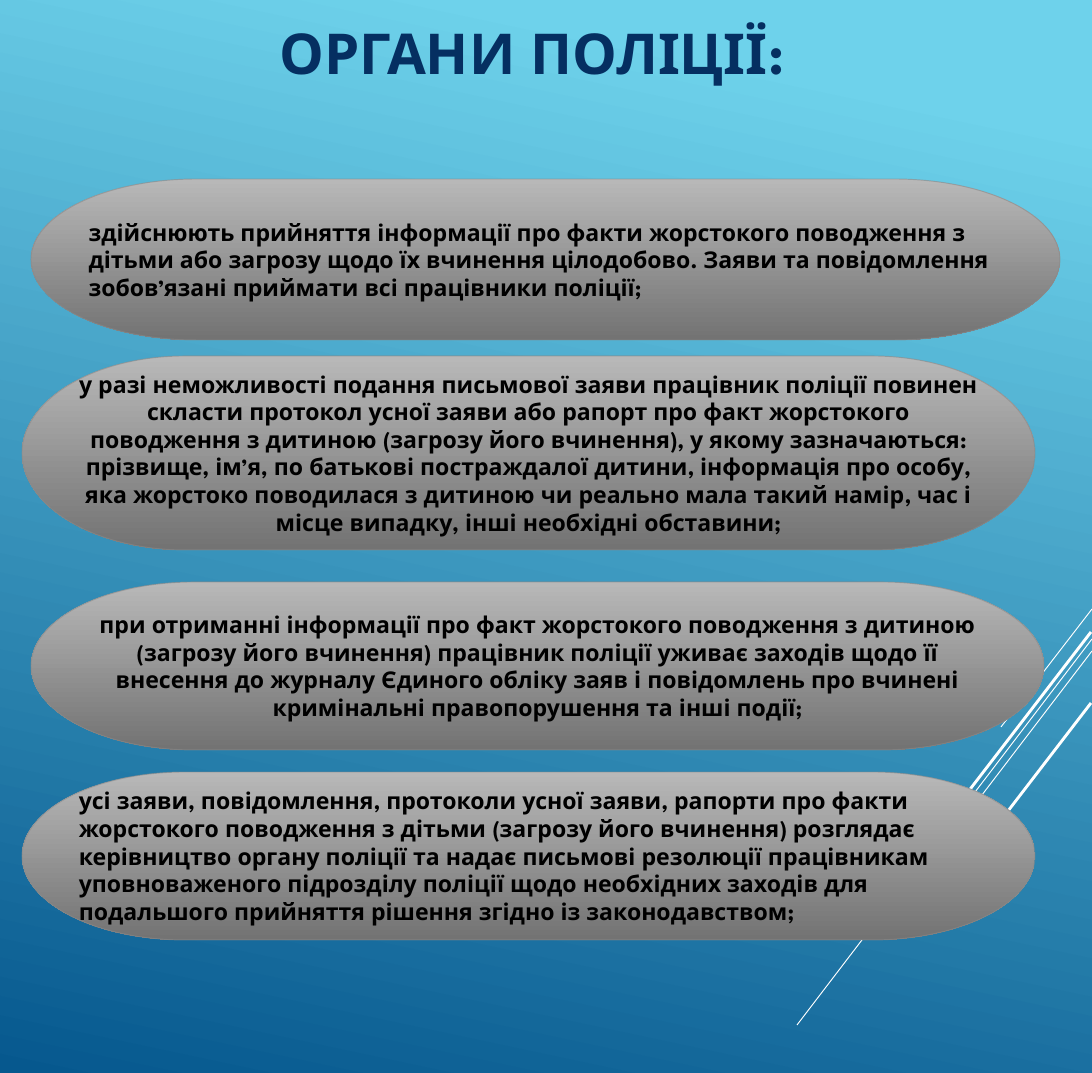
import pptx
import pptx.dml.color
import pptx.enum.shapes
import pptx.enum.text
import pptx.oxml
import pptx.oxml.ns
import pptx.util

WHITE = pptx.dml.color.RGBColor(0xFF, 0xFF, 0xFF)
BLACK = pptx.dml.color.RGBColor(0x00, 0x00, 0x00)
NAVY = pptx.dml.color.RGBColor(0x05, 0x2F, 0x61)
SKY = pptx.dml.color.RGBColor(0x6E, 0xD2, 0xEB)
DEEP_BLUE = pptx.dml.color.RGBColor(0x06, 0x58, 0x8E)
LIGHT_GREY = pptx.dml.color.RGBColor(0xB8, 0xB8, 0xB8)
DARK_GREY = pptx.dml.color.RGBColor(0x73, 0x73, 0x73)
EDGE_GREY = pptx.dml.color.RGBColor(0x89, 0x89, 0x89)

LEFT = pptx.enum.text.PP_ALIGN.LEFT
CENTER = pptx.enum.text.PP_ALIGN.CENTER

# Content: lengths in px
SLIDE_SIZE = (1092, 1073)
TITLE = "ОРГАНИ ПОЛІЦІЇ:"
TITLE_BOX = (270, 0, 783, 103)
TITLE_FONT = {"name": "League Spartan", "size": pptx.util.Pt(44), "bold": True}
DUTY_FONT = {"name": "League Spartan", "size": pptx.util.Pt(18), "bold": True}

# Start x, start y, end x, end y, width in points
RAYS = [
    (1092, 609, 1001, 727, 0.75),
    (1092, 639, 797, 1025, 0.75),
    (1092, 651, 904, 897, 0.75),
    (1091, 632, 918, 857, 2.25),
    (1091, 703, 965, 867, 2.25),
]

# Box, alignment, text
DUTIES = [
    ((31, 179, 1029, 161), LEFT,
     "здійснюють прийняття інформації про факти жорстокого поводження з дітьми "
     "або загрозу щодо їх вчинення цілодобово. Заяви та повідомлення зобов’язані "
     "приймати всі працівники поліції;"),
    ((22, 356, 1013, 194), CENTER,
     "у разі неможливості подання письмової заяви працівник поліції повинен "
     "скласти протокол усної заяви або рапорт про факт жорстокого поводження з "
     "дитиною (загрозу його вчинення), у якому зазначаються: прізвище, ім’я, по "
     "батькові постраждалої дитини, інформація про особу, яка жорстоко поводилася "
     "з дитиною чи реально мала такий намір, час і місце випадку, інші необхідні "
     "обставини;"),
    ((31, 582, 1013, 168), CENTER,
     "при отриманні інформації про факт жорстокого поводження з дитиною (загрозу "
     "його вчинення) працівник поліції уживає заходів щодо її внесення до журналу "
     "Єдиного обліку заяв і повідомлень про вчинені кримінальні правопорушення та "
     "інші події;"),
    ((22, 772, 1013, 168), LEFT,
     "усі заяви, повідомлення, протоколи усної заяви, рапорти про факти "
     "жорстокого поводження з дітьми (загрозу його вчинення) розглядає "
     "керівництво органу поліції та надає письмові резолюції працівникам "
     "уповноваженого підрозділу поліції щодо необхідних заходів для подальшого "
     "прийняття рішення згідно із законодавством;"),
]


def px(length):
    return pptx.util.Emu(round(length * 914400 / 92.2))


def set_gradient(fill, stops, clockwise_angle):
    fill.gradient()
    fill.gradient_angle = 360 - clockwise_angle
    for stop, (position, color) in zip(fill.gradient_stops, stops):
        stop.position = position
        stop.color.rgb = color


def write_text(shape, text, alignment, color, font_format):
    frame = shape.text_frame
    frame.text = text
    frame_format = {
        "word_wrap": True,
        "auto_size": pptx.enum.text.MSO_AUTO_SIZE.NONE,
        "vertical_anchor": pptx.enum.text.MSO_ANCHOR.MIDDLE,
    }
    for name, value in frame_format.items():
        setattr(frame, name, value)
    paragraph = frame.paragraphs[0]
    paragraph.alignment = alignment
    font = paragraph.runs[0].font
    for name, value in font_format.items():
        setattr(font, name, value)
    font.color.rgb = color


def add_ray(slide, start_x, start_y, end_x, end_y, width):
    ray = slide.shapes.add_connector(
        pptx.enum.shapes.MSO_CONNECTOR.STRAIGHT,
        px(start_x), px(start_y), px(end_x), px(end_y))
    ray.line.color.rgb = WHITE
    ray.line.width = pptx.util.Pt(width)
    pptx.oxml.ns.qn("a:effectLst")
    ray._element.spPr.append(
        pptx.oxml.parse_xml(f"<a:effectLst {pptx.oxml.ns.nsdecls('a')}/>"))


def add_duty(slide, box, alignment, text):
    shape = slide.shapes.add_shape(
        pptx.enum.shapes.MSO_SHAPE.FLOWCHART_TERMINATOR, *map(px, box))
    shape.shadow.inherit = False
    set_gradient(shape.fill, [(0, LIGHT_GREY), (1, DARK_GREY)], 90)
    shape.line.color.rgb = EDGE_GREY
    shape.line.width = pptx.util.Pt(0.75)
    edge_color = shape.line._ln.find(".//" + pptx.oxml.ns.qn("a:srgbClr"))
    edge_color.append(pptx.oxml.parse_xml(
        f"<a:alpha {pptx.oxml.ns.nsdecls('a')} val='60000'/>"))
    write_text(shape, text, alignment, BLACK, DUTY_FONT)


def main():
    presentation = pptx.Presentation()
    presentation.slide_width, presentation.slide_height = map(px, SLIDE_SIZE)
    slide = presentation.slides.add_slide(presentation.slide_layouts[5])
    set_gradient(slide.background.fill, [(0.1, SKY), (1, DEEP_BLUE)], 102)

    # Diagonal rays behind the panels
    for ray in RAYS:
        add_ray(slide, *ray)

    # Title
    title = slide.shapes.title
    title.left, title.top, title.width, title.height = map(px, TITLE_BOX)
    write_text(title, TITLE, LEFT, NAVY, TITLE_FONT)

    # Panels with the duties
    for duty in DUTIES:
        add_duty(slide, *duty)

    presentation.save("out.pptx")


if __name__ == "__main__":
    main()
